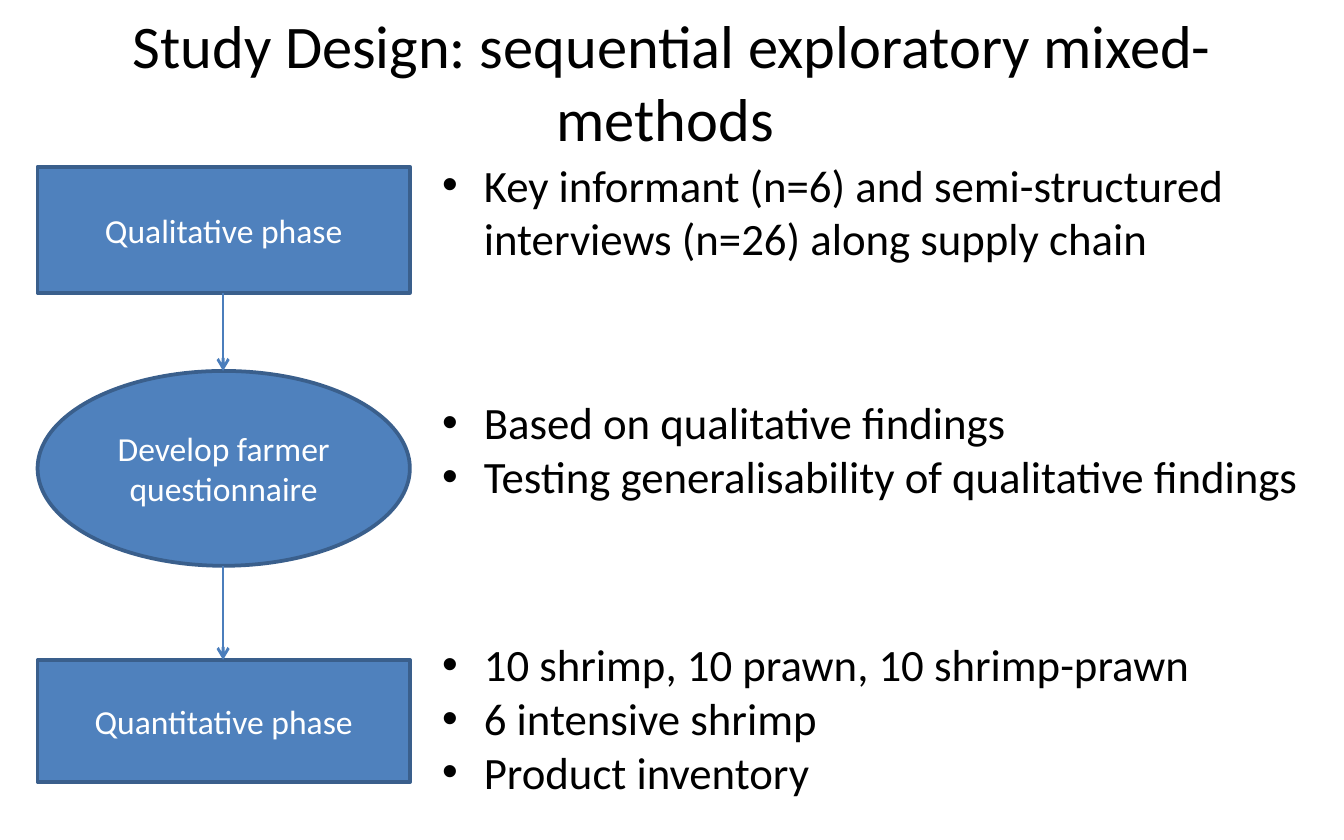
from lxml.etree import SubElement
from pptx import Presentation
from pptx.dml.color import RGBColor
from pptx.enum.shapes import MSO_CONNECTOR as Connector, MSO_SHAPE as Shape
from pptx.enum.text import MSO_ANCHOR as Anchor, MSO_AUTO_SIZE as AutoSize, PP_ALIGN as Align
from pptx.oxml.ns import qn
from pptx.util import Emu, Pt

PX = 9144
COLOURS = {"text": "000000", "label": "FFFFFF", "phase": "4F81BD",
           "outline": "3A5F8C", "arrow": "4B7EBC"}


def px(length):
    return Emu(length * PX)


def colour(name):
    return RGBColor.from_string(COLOURS[name])


class StudySlide:
    font_name = "Calibri"
    bullet_indent = 31

    def __init__(self, slide):
        self.slide = slide
        self.flow = slide.shapes.add_group_shape().shapes

    def style(self, paragraph, size, colour_name, align):
        paragraph.alignment = align
        paragraph.font.name = self.font_name
        paragraph.font.size = Pt(size)
        paragraph.font.bold = False
        paragraph.font.color.rgb = colour(colour_name)

    def place(self, placeholder, box, anchor):
        placeholder.left, placeholder.top, placeholder.width, placeholder.height = map(px, box)
        frame = placeholder.text_frame
        frame.word_wrap = True
        frame.auto_size = AutoSize.NONE
        frame.vertical_anchor = anchor
        return frame

    def title(self, text, box):
        frame = self.place(self.slide.shapes.title, box, Anchor.MIDDLE)
        frame.text = text
        self.style(frame.paragraphs[0], 32.4, "text", Align.CENTER)

    def bullets(self, placeholder, items, box):
        frame = self.place(placeholder, box, Anchor.TOP)
        frame.text = "\n".join(items)
        for paragraph in frame.paragraphs:
            paragraph.space_before = Pt(0)
            properties = paragraph._p.get_or_add_pPr()
            properties.set("marL", str(px(self.bullet_indent)))
            properties.set("indent", str(-px(self.bullet_indent)))
            SubElement(properties, qn("a:buFont"), typeface="Arial")
            SubElement(properties, qn("a:buChar"), char="•")
            self.style(paragraph, 24, "text", Align.LEFT)

    def phase(self, kind, text, box):
        phase = self.flow.add_shape(kind, *map(px, box))
        phase.shadow.inherit = False
        phase.fill.solid()
        phase.fill.fore_color.rgb = colour("phase")
        phase.line.color.rgb = colour("outline")
        phase.line.width = Pt(2)
        frame = phase.text_frame
        frame.word_wrap = True
        frame.vertical_anchor = Anchor.MIDDLE
        frame.text = text
        self.style(frame.paragraphs[0], 18, "label", Align.CENTER)

    def arrow(self, x, top, bottom):
        arrow = self.flow.add_connector(Connector.STRAIGHT, px(x), px(top), px(x), px(bottom))
        arrow.line.color.rgb = colour("arrow")
        arrow.line.width = Pt(1.5)
        SubElement(arrow.line._get_or_add_ln(), qn("a:tailEnd"), type="arrow")
        SubElement(arrow._element.spPr, qn("a:effectLst"))


def main():
    deck = Presentation()
    deck.slide_width, deck.slide_height = px(1000), px(625)
    slide = deck.slides.add_slide(deck.slide_layouts.get_by_name("Comparison"))
    study = StudySlide(slide)
    study.title("Study Design: sequential exploratory mixed-methods ", (12, 8, 976, 104))

    phase_left, phase_width = 28, 277
    phases = [
        (Shape.RECTANGLE, "Qualitative phase", 124, 94),
        (Shape.OVAL, "Develop farmer questionnaire", 276, 145),
        (Shape.RECTANGLE, "Quantitative phase", 491, 91),
    ]
    for kind, text, top, height in phases:
        study.phase(kind, text, (phase_left, top, phase_width, height))
    for (_, _, top, height), (_, _, next_top, _) in zip(phases, phases[1:]):
        study.arrow(phase_left + phase_width // 2, top + height, next_top)

    details = [
        (112, 131, ["Key informant (n=6) and semi-structured interviews (n=26) along supply chain"]),
        (289, 131, ["Based on qualitative findings",
                    "Testing generalisability of qualitative findings"]),
        (469, 156, ["10 shrimp, 10 prawn, 10 shrimp-prawn", "6 intensive shrimp",
                    "Product inventory"]),
    ]
    *bodies, spare = list(slide.placeholders)[1:5]
    for body, (top, height, items) in zip(bodies, details):
        study.bullets(body, items, (319, top, 681, height))
    spare._element.getparent().remove(spare._element)

    deck.save("out.pptx")


if __name__ == "__main__":
    main()
